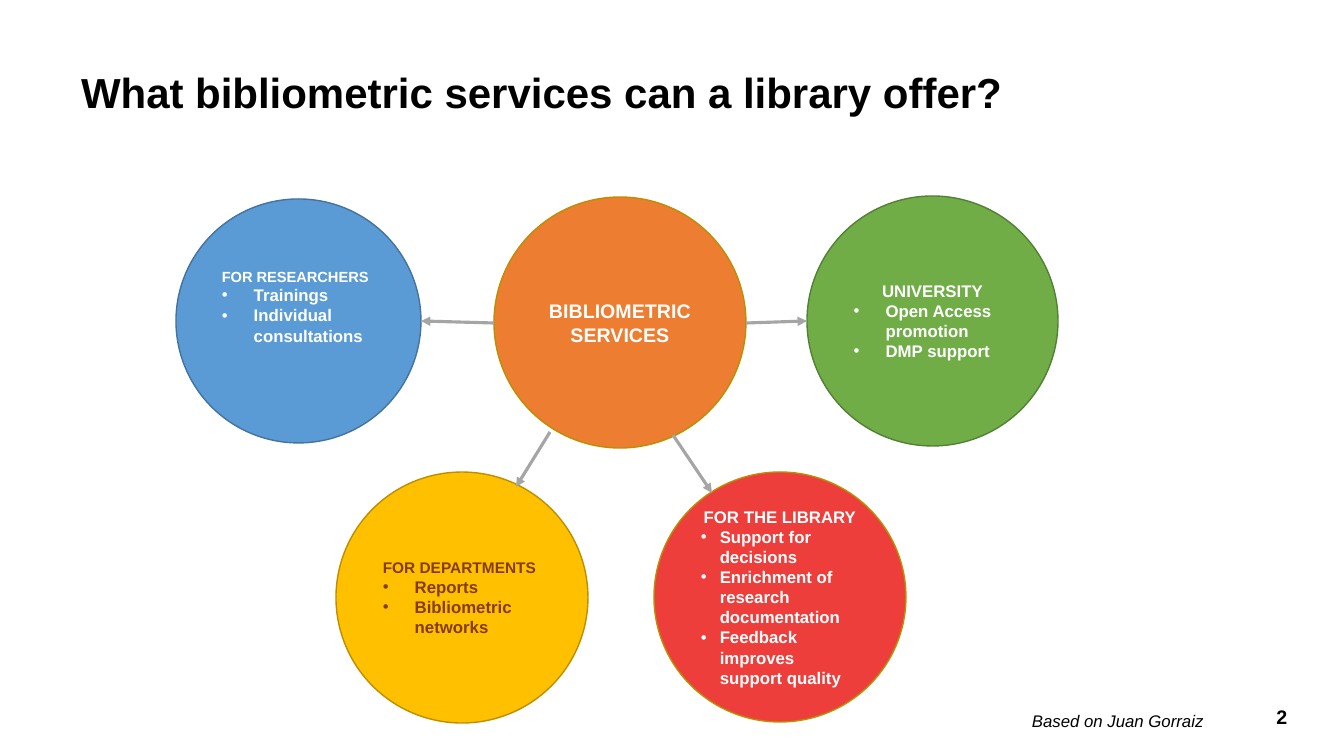
from lxml import etree
from pptx import Presentation
from pptx.dml.color import RGBColor
from pptx.enum.shapes import MSO_CONNECTOR, MSO_SHAPE
from pptx.enum.text import MSO_ANCHOR, MSO_AUTO_SIZE, PP_ALIGN
from pptx.oxml.ns import qn
from pptx.util import Pt

LEFT, CENTER = PP_ALIGN.LEFT, PP_ALIGN.CENTER
MIDDLE, BOTTOM = MSO_ANCHOR.MIDDLE, MSO_ANCHOR.BOTTOM
OVAL, STRAIGHT = MSO_SHAPE.OVAL, MSO_CONNECTOR.STRAIGHT
TITLE_ONLY = 5
EMU_PER_PX = 914400 / 100.8
COLORS = {
    "black": "000000", "white": "FFFFFF", "brown": "843C0B", "grey": "A5A5A5",
    "blue": "5B9BD5", "dark blue": "43739E", "yellow": "FFC000",
    "dark yellow": "BD8E00", "red": "EE3E3C", "green": "70AD47",
    "dark green": "538035", "orange": "ED7D31",
}


def px(*lengths):
    """Turn pixel lengths into a list of EMU."""
    return [round(length * EMU_PER_PX) for length in lengths]


def write(paragraph, text, size, color, align=LEFT, bold=True, italic=False):
    paragraph.text = text
    paragraph.alignment = align
    font = paragraph.font
    font.name = "Arial"
    font.size = Pt(size)
    font.bold = bold
    font.italic = italic
    font.color.rgb = RGBColor.from_string(COLORS[color])


presentation = Presentation()
presentation.slide_width, presentation.slide_height = px(1344, 756)
slide = presentation.slides.add_slide(presentation.slide_layouts[TITLE_ONLY])

# Title
title = slide.shapes.title
title.left, title.top, title.width, title.height = px(71, 67, 990, 56)
title.text_frame.auto_size = MSO_AUTO_SIZE.NONE
title.text_frame.vertical_anchor = MIDDLE
title_paragraph = title.text_frame.paragraphs[0]
title_paragraph.line_spacing = 0.9
write(title_paragraph, "What bibliometric services can a library offer?", 30, "black")

# Circles: box, fill, outline, text colour, heading, its size and alignment,
# bullet indent, bottom inset, bullets
circles = [
    ((176, 199, 245, 244), "blue", "dark blue", "white",
     "FOR RESEARCHERS", 10.5, LEFT, 32, 34,
     ["Trainings", "Individual consultations"]),
    ((336, 472, 252, 251), "yellow", "dark yellow", "brown",
     "FOR DEPARTMENTS", 11, LEFT, 32, 5,
     ["Reports", "Bibliometric networks"]),
    ((654, 472, 252, 250), "red", "dark yellow", "white",
     "FOR THE LIBRARY", 12, CENTER, 19, 5,
     ["Support for decisions", "Enrichment of research documentation",
      "Feedback improves support quality"]),
    ((807, 196, 251, 250), "green", "dark green", "white",
     "UNIVERSITY", 12, CENTER, 32, 5,
     ["Open Access promotion", "DMP support"]),
    ((494, 197, 252, 251), "orange", "dark yellow", "white",
     "BIBLIOMETRIC SERVICES", 14, CENTER, 0, 5, []),
]
for (box, fill, outline, text_color, heading, heading_size, align,
     indent, bottom_inset, bullets) in circles:
    circle = slide.shapes.add_shape(OVAL, *px(*box))
    circle.shadow.inherit = False
    circle.fill.solid()
    circle.fill.fore_color.rgb = RGBColor.from_string(COLORS[fill])
    circle.line.color.rgb = RGBColor.from_string(COLORS[outline])
    circle.line.width = Pt(1)
    frame = circle.text_frame
    frame.word_wrap = True
    frame.vertical_anchor = MIDDLE
    frame.margin_bottom = px(bottom_inset)[0]
    write(frame.paragraphs[0], heading, heading_size, text_color, align)
    for bullet in bullets:
        paragraph = frame.add_paragraph()
        properties = paragraph._p.get_or_add_pPr()
        hanging = px(indent)[0]
        properties.set("marL", str(hanging))
        properties.set("indent", str(-hanging))
        etree.SubElement(properties, qn("a:buFont")).set("typeface", "Arial")
        etree.SubElement(properties, qn("a:buChar")).set("char", "•")
        write(paragraph, bullet, 12, text_color)

# Arrows from the central circle
arrows = [
    (494, 323, 421, 321),
    (550, 432, 516, 487),
    (673, 435, 712, 493),
    (746, 323, 807, 321),
]
for ends in arrows:
    arrow = slide.shapes.add_connector(STRAIGHT, *px(*ends))
    arrow.line.color.rgb = RGBColor.from_string(COLORS["grey"])
    arrow.line.width = Pt(2.25)
    etree.SubElement(arrow.line._get_or_add_ln(), qn("a:tailEnd")).set("type", "triangle")
    etree.SubElement(arrow._element.spPr, qn("a:effectLst"))

# Credit and page number
footers = [
    ((1022, 706, 200, 30), "Based on Juan Gorraiz", 12, LEFT, MIDDLE, False, True),
    ((1231, 693, 102, 40), "2", 14, CENTER, BOTTOM, True, False),
]
for box, text, size, align, anchor, bold, italic in footers:
    footer = slide.shapes.add_textbox(*px(*box))
    footer.text_frame.word_wrap = True
    footer.text_frame.vertical_anchor = anchor
    write(footer.text_frame.paragraphs[0], text, size, "black", align, bold, italic)

presentation.save("out.pptx")
